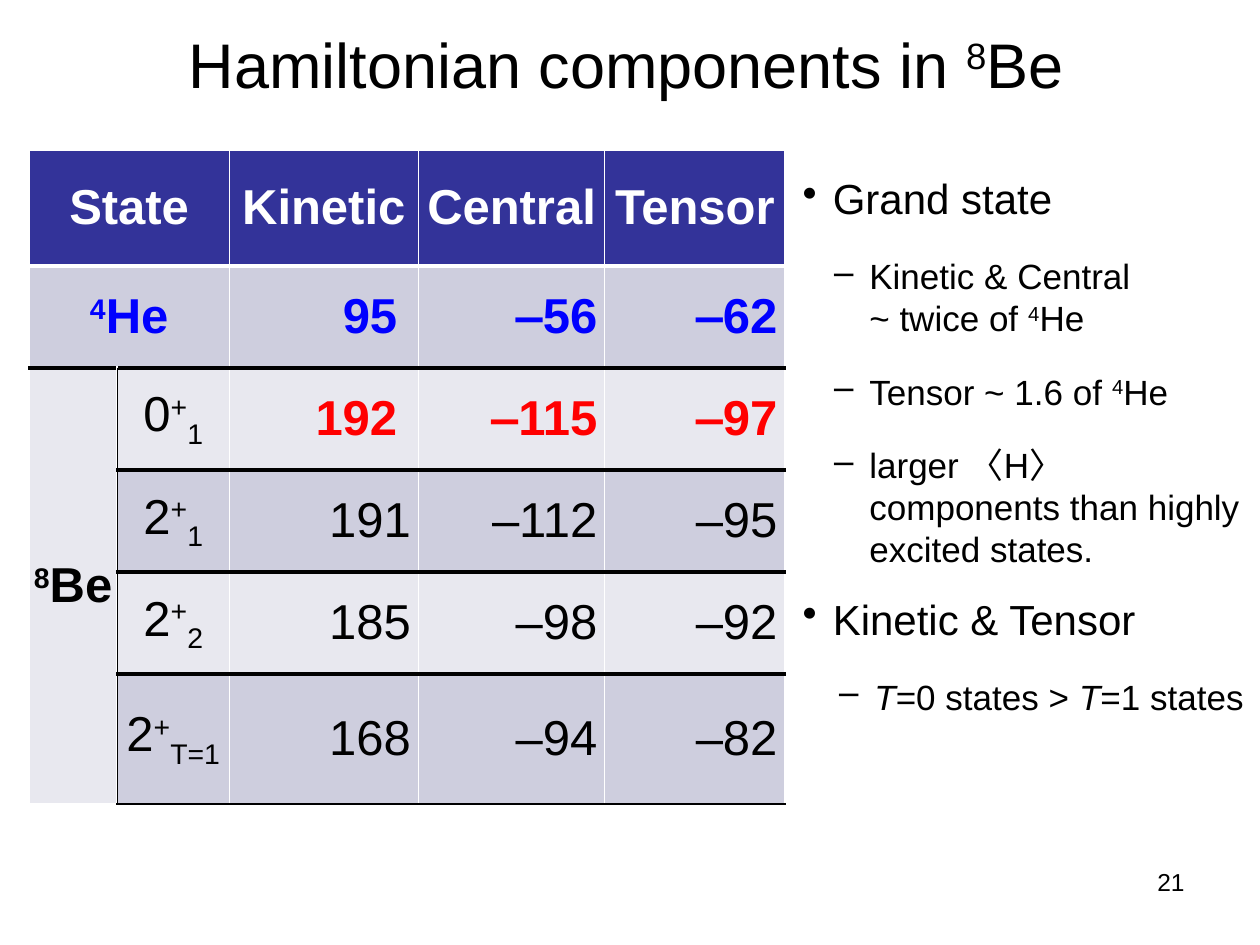
"""Build a slide comparing Hamiltonian components of beryllium-8 states."""
from dataclasses import dataclass

from lxml import etree
from pptx import Presentation
from pptx.dml.color import RGBColor
from pptx.enum.shapes import MSO_CONNECTOR
from pptx.enum.text import MSO_ANCHOR, PP_ALIGN
from pptx.oxml.ns import qn
from pptx.util import Inches, Pt

CENTER, RIGHT, LEFT = PP_ALIGN.CENTER, PP_ALIGN.RIGHT, PP_ALIGN.LEFT
MIDDLE, TOP = MSO_ANCHOR.MIDDLE, MSO_ANCHOR.TOP


@dataclass(frozen=True)
class Theme:
    font: str = "Arial"
    title: int = 36
    table: int = 28
    topic: int = 24
    detail: int = 20
    number: int = 14
    ink: str = "000000"
    paper: str = "FFFFFF"
    header: str = "333399"
    bands: tuple = ("CECEDE", "E8E8EF")
    reference: str = "0000FF"
    ground: str = "FF0000"
    thin: float = 1
    thick: float = 3


THEME = Theme()
SLIDE_W, SLIDE_H = 10, 7.5
TABLE_LEFT, TABLE_TOP = 0.23, 1.19
COLUMNS = (0.7, 0.89, 1.5, 1.48, 1.43)
ROWS = (0.92, 0.81, 0.81, 0.81, 0.81, 1.03)

TITLE = "Hamiltonian components in ^8^Be"
PAGE = "21"
HEADINGS = ("State", "", "Kinetic", "Central", "Tensor")
STATES = [
    ("^4^He", "", "95 ", "‒56", "‒62"),
    ("^8^Be", "0^+^_1_", "192 ", "‒115", "‒97"),
    ("", "2^+^_1_", "191", "‒112", "‒95"),
    ("", "2^+^_2_", "185", "‒98", "‒92"),
    ("", "2^+^_T=1_", "168", "‒94", "‒82"),
]
EMPHASIS = {1: THEME.reference, 2: THEME.ground}
MERGES = [((0, 0), (0, 1)), ((1, 0), (1, 1)), ((2, 0), (5, 0))]
FINDINGS = [
    ("Grand state", [
        "Kinetic & Central\n~ twice of ^4^He",
        "Tensor ~ 1.6 of ^4^He",
        "larger 〈H〉 components than highly excited states.",
    ], 0.67),
    ("Kinetic & Tensor", ["*T*=0 states > *T*=1 states"], 0.71),
]
BASELINES = {"^": "30000", "_": "-25000"}


def rgb(color):
    return RGBColor.from_string(color)


def split_marks(text):
    """Yield (piece, mark) pairs, where ^, _ and * open and close a styled piece."""
    piece, mark = "", ""
    for char in text:
        if char in "^_*\n":
            if piece:
                yield piece, mark
            if char == "\n":
                yield char, ""
            else:
                mark = "" if mark == char else char
            piece = ""
        else:
            piece += char
    if piece:
        yield piece, mark


def write(paragraph, text, size, color=THEME.ink, bold=False, align=LEFT):
    """Write marked-up text into a paragraph."""
    paragraph.alignment = align
    font = paragraph.font
    font.name, font.size, font.bold = THEME.font, Pt(size), bold
    font.color.rgb = rgb(color)
    for piece, mark in split_marks(text):
        if piece == "\n":
            paragraph.add_line_break()
            continue
        run = paragraph.add_run()
        run.text = piece
        if mark in BASELINES:
            run._r.get_or_add_rPr().set("baseline", BASELINES[mark])
        elif mark:
            run.font.italic = True


def set_border(cell, side, color, width):
    """Draw one edge of a table cell."""
    edge = etree.SubElement(cell._tc.get_or_add_tcPr(), qn(f"a:ln{side}"), w=str(Pt(width)))
    solid = etree.SubElement(edge, qn("a:solidFill"))
    etree.SubElement(solid, qn("a:srgbClr"), val=color)


def row_rule(boundary):
    """Return colour and width of the rule above the row with this index."""
    if boundary == 0:
        return THEME.paper, THEME.thin
    if boundary == 1:
        return THEME.paper, THEME.thick
    return THEME.ink, THEME.thin if boundary == len(ROWS) else THEME.thick


def format_cell(cell, row, column, text):
    """Fill, rule and write one table cell."""
    set_border(cell, "L", THEME.paper, THEME.thin)
    set_border(cell, "R", THEME.paper, THEME.thin)
    if column or row <= 2:
        set_border(cell, "T", *row_rule(row))
    if column or row < 2 or row == len(ROWS) - 1:
        set_border(cell, "B", *row_rule(row + 1))
    band = 1 if column == 0 and row > 1 else (row + 1) % 2
    cell.fill.solid()
    cell.fill.fore_color.rgb = rgb(THEME.bands[band] if row else THEME.header)
    tight = row > 1 and (column == 0 or (column == 1 and row == len(ROWS) - 1))
    cell.margin_left = cell.margin_right = Inches(0 if tight else 0.06)
    cell.vertical_anchor = MIDDLE
    is_label = column < 2
    color = EMPHASIS.get(row, THEME.ink) if row else THEME.paper
    if row > 1 and is_label:
        color = THEME.ink
    bold = row < 2 or column == 0 or (row == 2 and not is_label)
    align = CENTER if is_label or row == 0 else RIGHT
    if text:
        write(cell.text_frame.paragraphs[0], text, THEME.table, color, bold, align)


def add_state_table(slide):
    cells = [HEADINGS, *STATES]
    table = slide.shapes.add_table(
        len(ROWS), len(COLUMNS), Inches(TABLE_LEFT), Inches(TABLE_TOP),
        Inches(sum(COLUMNS)), Inches(sum(ROWS))).table
    table.first_row = table.horz_banding = False
    for column, width in zip(table.columns, COLUMNS):
        column.width = Inches(width)
    for row, height in zip(table.rows, ROWS):
        row.height = Inches(height)
    for row, texts in enumerate(cells):
        for column, text in enumerate(texts):
            format_cell(table.cell(row, column), row, column, text)
    for first, last in MERGES:
        table.cell(*first).merge(table.cell(*last))

    x = Inches(TABLE_LEFT + COLUMNS[0])
    divider = slide.shapes.add_connector(
        MSO_CONNECTOR.STRAIGHT, x, Inches(TABLE_TOP + sum(ROWS[:2])),
        x, Inches(TABLE_TOP + sum(ROWS)))
    divider.line.color.rgb, divider.line.width = rgb(THEME.ink), Pt(0.75)
    etree.SubElement(divider._element.spPr, qn("a:effectLst"))


def add_text_frame(slide, left, top, width, height):
    frame = slide.shapes.add_textbox(*map(Inches, (left, top, width, height))).text_frame
    frame.word_wrap = True
    return frame


def add_findings(slide):
    frame = add_text_frame(slide, TABLE_LEFT + sum(COLUMNS), 1.39, 3.67, 4.58)
    frame.margin_left = frame.margin_right = 0
    points = []
    for topic, details, indent in FINDINGS:
        points.append((topic, 0, THEME.topic, "•", 0.38, -0.24))
        points += [(detail, 1, THEME.detail, "–", indent, -0.28) for detail in details]
    for index, (text, level, size, bullet, indent, hanging) in enumerate(points):
        paragraph = frame.add_paragraph() if index else frame.paragraphs[0]
        paragraph.level = level
        paragraph.line_spacing, paragraph.space_before = Pt(24), Pt(18)
        properties = paragraph._p.get_or_add_pPr()
        properties.set("marL", str(Inches(indent)))
        properties.set("indent", str(Inches(hanging)))
        etree.SubElement(properties, qn("a:buChar"), char=bullet)
        write(paragraph, text, size)


def main():
    deck = Presentation()
    deck.slide_width, deck.slide_height = Inches(SLIDE_W), Inches(SLIDE_H)
    slide = deck.slides.add_slide(deck.slide_layouts[5])
    title = slide.shapes.title
    title.left, title.top, title.width, title.height = map(Inches, (0.47, 0.16, 9, 0.69))
    title.text_frame.vertical_anchor = MIDDLE
    write(title.text_frame.paragraphs[0], TITLE, THEME.title, align=CENTER)
    add_state_table(slide)
    add_findings(slide)
    number = add_text_frame(slide, 7.17, 6.83, 2.33, 0.52)
    number.vertical_anchor = TOP
    write(number.paragraphs[0], PAGE, THEME.number, align=RIGHT)
    deck.save("out.pptx")


if __name__ == "__main__":
    main()
